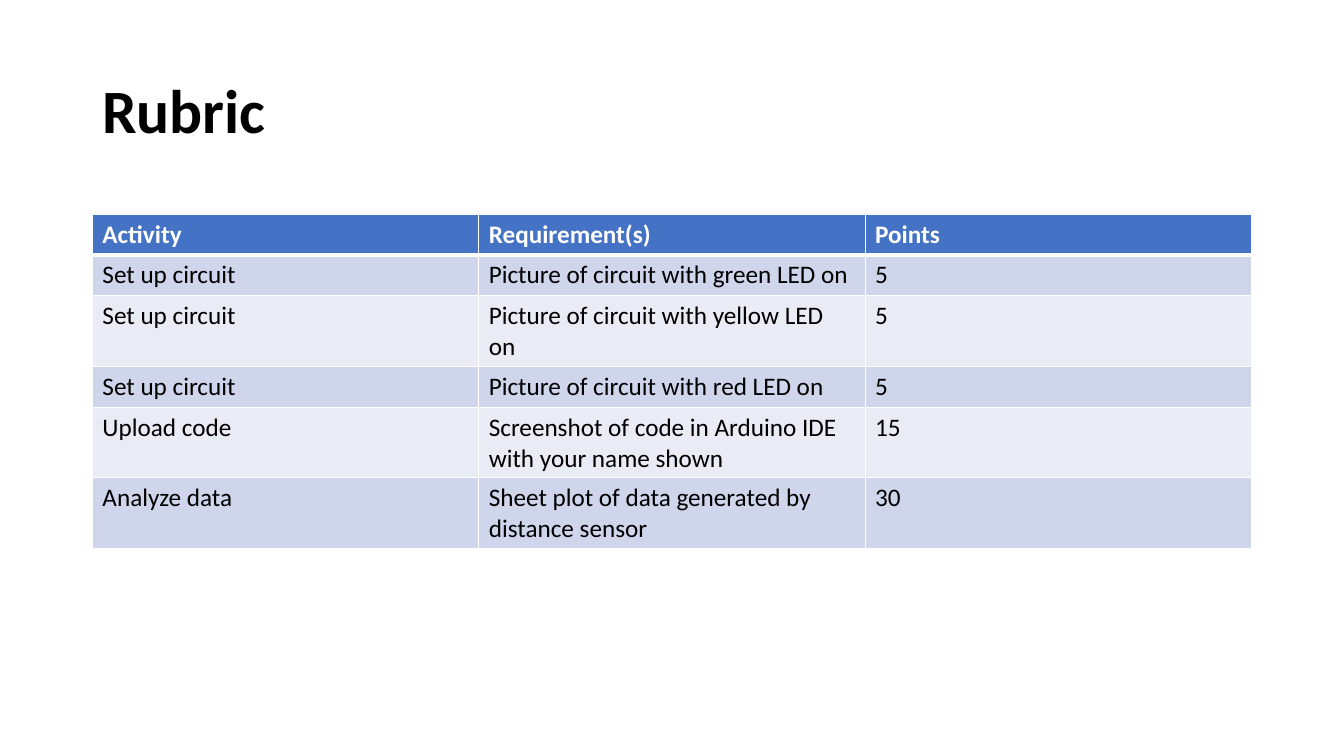
from lxml.etree import SubElement
from pptx import Presentation
from pptx.dml.color import RGBColor
from pptx.enum.text import MSO_ANCHOR
from pptx.oxml.ns import qn
from pptx.util import Pt

FONT = "Calibri"
COLOURS = {
    "black": "000000",
    "white": "FFFFFF",
    "header": "4472C4",
    "odd": "CFD5EA",
    "even": "E9EBF5",
}
LEFT, WIDTH = 66, 828
TABLE_TOP, ROW_HEIGHT = 152.85, 29.2
THIN, THICK = 1, 3
RUBRIC = [
    ("Activity", "Requirement(s)", "Points"),
    ("Set up circuit", "Picture of circuit with green LED on", "5"),
    ("Set up circuit", "Picture of circuit with yellow LED on", "5"),
    ("Set up circuit", "Picture of circuit with red LED on", "5"),
    ("Upload code", "Screenshot of code in Arduino IDE with your name shown", "15"),
    ("Analyze data", "Sheet plot of data generated by distance sensor", "30"),
]


def colour(name):
    return RGBColor.from_string(COLOURS[name])


def add_text(para, text, size, colour_name, bold):
    span = para.add_run()
    span.text = text
    span.font.name = FONT
    span.font.size = Pt(size)
    span.font.bold = bold
    span.font.color.rgb = colour(colour_name)


def add_title(page, text):
    box = page.shapes.add_textbox(Pt(LEFT), Pt(28.75), Pt(WIDTH), Pt(104.4))
    frame = box.text_frame
    frame.word_wrap = True
    frame.vertical_anchor = MSO_ANCHOR.MIDDLE
    para = frame.paragraphs[0]
    para.line_spacing = 0.9
    add_text(para, text, 44, "black", True)


def set_borders(cell, top, bottom):
    properties = cell._tc.get_or_add_tcPr()
    for side, width in (("L", THIN), ("R", THIN), ("T", top), ("B", bottom)):
        line = SubElement(properties, qn(f"a:ln{side}"), w=str(Pt(width)))
        fill = SubElement(line, qn("a:solidFill"))
        SubElement(fill, qn("a:srgbClr"), val=COLOURS["white"])


def fill_cell(cell, text, row_number):
    is_header = row_number == 0
    set_borders(
        cell,
        top=THICK if row_number == 1 else THIN,
        bottom=THICK if is_header else THIN,
    )
    band = "header" if is_header else ("even", "odd")[row_number % 2]
    cell.fill.solid()
    cell.fill.fore_color.rgb = colour(band)
    text_colour = "white" if is_header else "black"
    add_text(cell.text_frame.paragraphs[0], text, 18, text_colour, is_header)


def add_rubric(page, rows):
    column_count = len(rows[0])
    frame = page.shapes.add_table(
        len(rows), column_count,
        Pt(LEFT), Pt(TABLE_TOP), Pt(WIDTH), Pt(ROW_HEIGHT * len(rows)),
    )
    table = frame.table
    for column in table.columns:
        column.width = Pt(WIDTH / column_count)
    for row_number, texts in enumerate(rows):
        table.rows[row_number].height = Pt(ROW_HEIGHT)
        for column_number, text in enumerate(texts):
            fill_cell(table.cell(row_number, column_number), text, row_number)


def main():
    deck = Presentation()
    deck.slide_width, deck.slide_height = Pt(960), Pt(540)
    page = deck.slides.add_slide(deck.slide_layouts[6])
    add_title(page, "Rubric")
    add_rubric(page, RUBRIC)
    deck.save("out.pptx")


if __name__ == "__main__":
    main()
